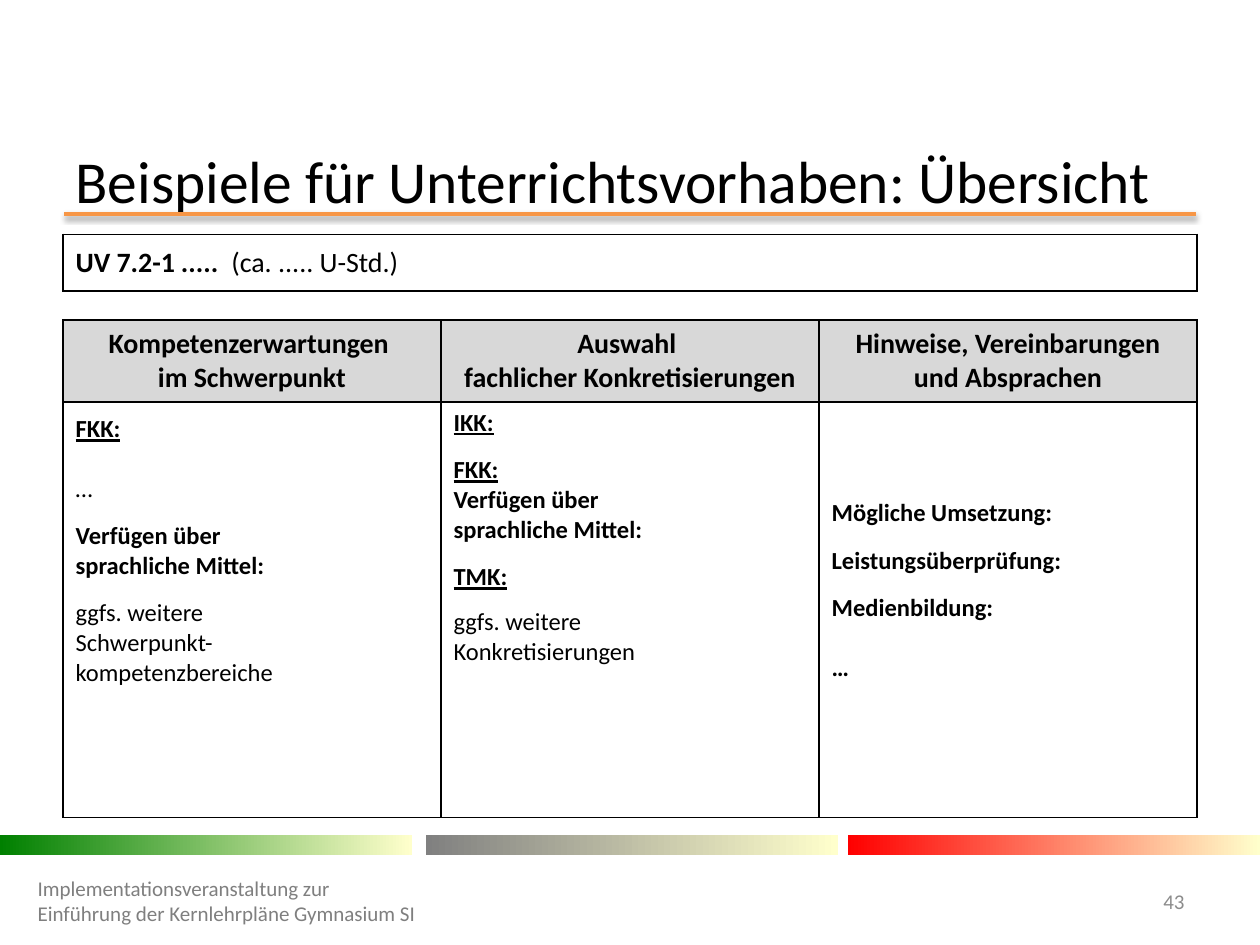
import pptx
import pptx.util
import pptx.dml.color
import pptx.enum.text
import pptx.enum.shapes
import pptx.oxml.ns
import lxml.etree

Inches, Pt = pptx.util.Inches, pptx.util.Pt
ALIGN = pptx.enum.text.PP_ALIGN
ANCHOR = pptx.enum.text.MSO_ANCHOR
qn = pptx.oxml.ns.qn

COLORS = {
    "text": "000000", "rule": "F79646", "header": "D8D8D8", "footer": "7F7F7F",
    "number": "8C8C8C", "green": "008000", "gray": "808080", "red": "FF0000",
    "cream": "FFFFCC",
}
TITLE = "Beispiele für Unterrichtsvorhaben: Übersicht"
FOOTER = "Implementationsveranstaltung zur Einführung der Kernlehrpläne Gymnasium SI"
PAGE_NUMBER = "43"
UNIT = [("UV 7.2-1 ", True, False), (".....  ", True, True), ("(ca. ..... U-Std.)", False, False)]
HEADERS = [
    "Kompetenzerwartungen \vim Schwerpunkt",
    "Auswahl \vfachlicher Konkretisierungen",
    "Hinweise, Vereinbarungen und Absprachen",
]
UNDERLINED = {"IKK:", "FKK:", "TMK:"}
BODY = [
    {"anchor": ANCHOR.TOP, "top": 0.1, "paras": [
        ("FKK:", True, 0),
        ("…", False, 17),
        ("Verfügen über \vsprachliche Mittel:", True, 10),
        ("ggfs. weitere \vSchwerpunkt-\vkompetenzbereiche", False, 10)]},
    {"anchor": ANCHOR.TOP, "top": 0.05, "paras": [
        ("IKK:", True, 0),
        ("FKK:\vVerfügen über \vsprachliche Mittel:", True, 10),
        ("TMK:", True, 10),
        ("ggfs. weitere \vKonkretisierungen", False, 8.5)]},
    {"anchor": ANCHOR.MIDDLE, "top": 0.05, "paras": [
        ("Mögliche Umsetzung:", True, 0),
        ("Leistungsüberprüfung:", True, 10),
        ("Medienbildung:", True, 10),
        ("…\v", True, 17)]},
]
ROW_HEIGHTS = [0.45, 0.23, 0.65, 3.3]
COLUMN_WIDTH = 3
BARS = [(0, "green"), (3.38, "gray"), (6.73, "red")]


def rgb(name):
    return pptx.dml.color.RGBColor.from_string(COLORS[name])


def style(span, size, color="text", bold=False):
    span.font.name = "Calibri"
    span.font.size = Pt(size)
    span.font.bold = bold
    span.font.color.rgb = rgb(color)


def add_label(page, text, left, width, color, align):
    box = page.shapes.add_textbox(Inches(left), Inches(6.95), Inches(width), Inches(0.4))
    frame = box.text_frame
    frame.word_wrap = True
    frame.vertical_anchor = ANCHOR.MIDDLE
    frame.text = text
    frame.paragraphs[0].alignment = align
    style(frame.paragraphs[0].runs[0], 12, color)


def add_bar(page, left, color):
    bar = page.shapes.add_shape(pptx.enum.shapes.MSO_SHAPE.RECTANGLE,
                                Inches(left), Inches(6.63), Inches(3.27), Inches(0.16))
    bar.shadow.inherit = False
    bar.line.fill.background()
    bar.fill.gradient()
    bar.fill.gradient_angle = 0
    for stop, name, position in zip(bar.fill.gradient_stops, (color, "cream"), (0, 1)):
        stop.color.rgb = rgb(name)
        stop.position = position


def add_rule(page):
    rule = page.shapes.add_connector(pptx.enum.shapes.MSO_CONNECTOR.STRAIGHT,
                                     Inches(0.51), Inches(1.7), Inches(9.49), Inches(1.7))
    rule.line.color.rgb = rgb("rule")
    rule.line.width = Pt(2)
    effects = lxml.etree.SubElement(rule._element.spPr, qn("a:effectLst"))
    shadow = lxml.etree.SubElement(effects, qn("a:outerShdw"), blurRad=str(Pt(3.1)),
                                   dist=str(Pt(1.6)), dir="5400000", rotWithShape="0")
    tone = lxml.etree.SubElement(shadow, qn("a:srgbClr"), val=COLORS["text"])
    lxml.etree.SubElement(tone, qn("a:alpha"), val="38000")


def set_borders(cell, visible):
    properties = cell._tc.get_or_add_tcPr()
    for index, side in enumerate("LRTB"):
        line = lxml.etree.Element(qn("a:ln" + side), w=str(Pt(1)))
        if side in visible:
            fill = lxml.etree.SubElement(line, qn("a:solidFill"))
            lxml.etree.SubElement(fill, qn("a:srgbClr"), val=COLORS["text"])
        else:
            lxml.etree.SubElement(line, qn("a:noFill"))
        properties.insert(index, line)


def fill_body(cell, content):
    cell.vertical_anchor = content["anchor"]
    cell.margin_top = Inches(content["top"])
    frame = cell.text_frame
    for index, (text, bold, gap) in enumerate(content["paras"]):
        para = frame.add_paragraph() if index else frame.paragraphs[0]
        para.text = text
        if gap:
            para.space_before = Pt(gap)
        for span in para.runs:
            style(span, 14, bold=bold)
            span.font.underline = span.text in UNDERLINED


def add_overview(page):
    table = page.shapes.add_table(len(ROW_HEIGHTS), len(HEADERS), Inches(0.5), Inches(1.86),
                                  Inches(9), Inches(sum(ROW_HEIGHTS))).table
    table.first_row = table.horz_banding = False
    for column in table.columns:
        column.width = Inches(COLUMN_WIDTH)
    for index, (row, height) in enumerate(zip(table.rows, ROW_HEIGHTS)):
        row.height = Inches(height)
        for cell in row.cells:
            cell.fill.background()
            cell.vertical_anchor = ANCHOR.MIDDLE
            set_borders(cell, "TB" if index == 1 else "LRTB")

    table.cell(0, 0).merge(table.cell(0, 2))
    table.cell(1, 0).merge(table.cell(1, 1))
    for cell in table.rows[1].cells:
        para = cell.text_frame.paragraphs[0]
        lxml.etree.SubElement(para._p, qn("a:endParaRPr"), sz="600")

    unit_para = table.cell(0, 0).text_frame.paragraphs[0]
    for text, bold, italic in UNIT:
        span = unit_para.add_run()
        span.text = text
        style(span, 16, bold=bold)
        span.font.italic = italic

    for column, (header, content) in enumerate(zip(HEADERS, BODY)):
        cell = table.cell(2, column)
        cell.fill.solid()
        cell.fill.fore_color.rgb = rgb("header")
        para = cell.text_frame.paragraphs[0]
        para.text = header
        para.alignment = ALIGN.CENTER
        for span in para.runs:
            style(span, 16, bold=True)
        fill_body(table.cell(3, column), content)


def main():
    deck = pptx.Presentation()
    deck.slide_width, deck.slide_height = Inches(10), Inches(7.5)
    page = deck.slides.add_slide(deck.slide_layouts[5])
    add_rule(page)
    for left, color in BARS:
        add_bar(page, left, color)

    title = page.shapes.title
    title.left, title.top, title.width, title.height = map(Inches, (0.5, 1.23, 9, 0.39))
    frame = title.text_frame
    frame.text = TITLE
    frame.auto_size = pptx.enum.text.MSO_AUTO_SIZE.NONE
    frame.vertical_anchor = ANCHOR.MIDDLE
    frame.paragraphs[0].alignment = ALIGN.LEFT
    style(frame.paragraphs[0].runs[0], 34)

    add_label(page, PAGE_NUMBER, 8.86, 0.64, "number", ALIGN.RIGHT)
    add_label(page, FOOTER, 0.2, 3.24, "footer", ALIGN.LEFT)
    add_overview(page)
    deck.save("out.pptx")


if __name__ == "__main__":
    main()
